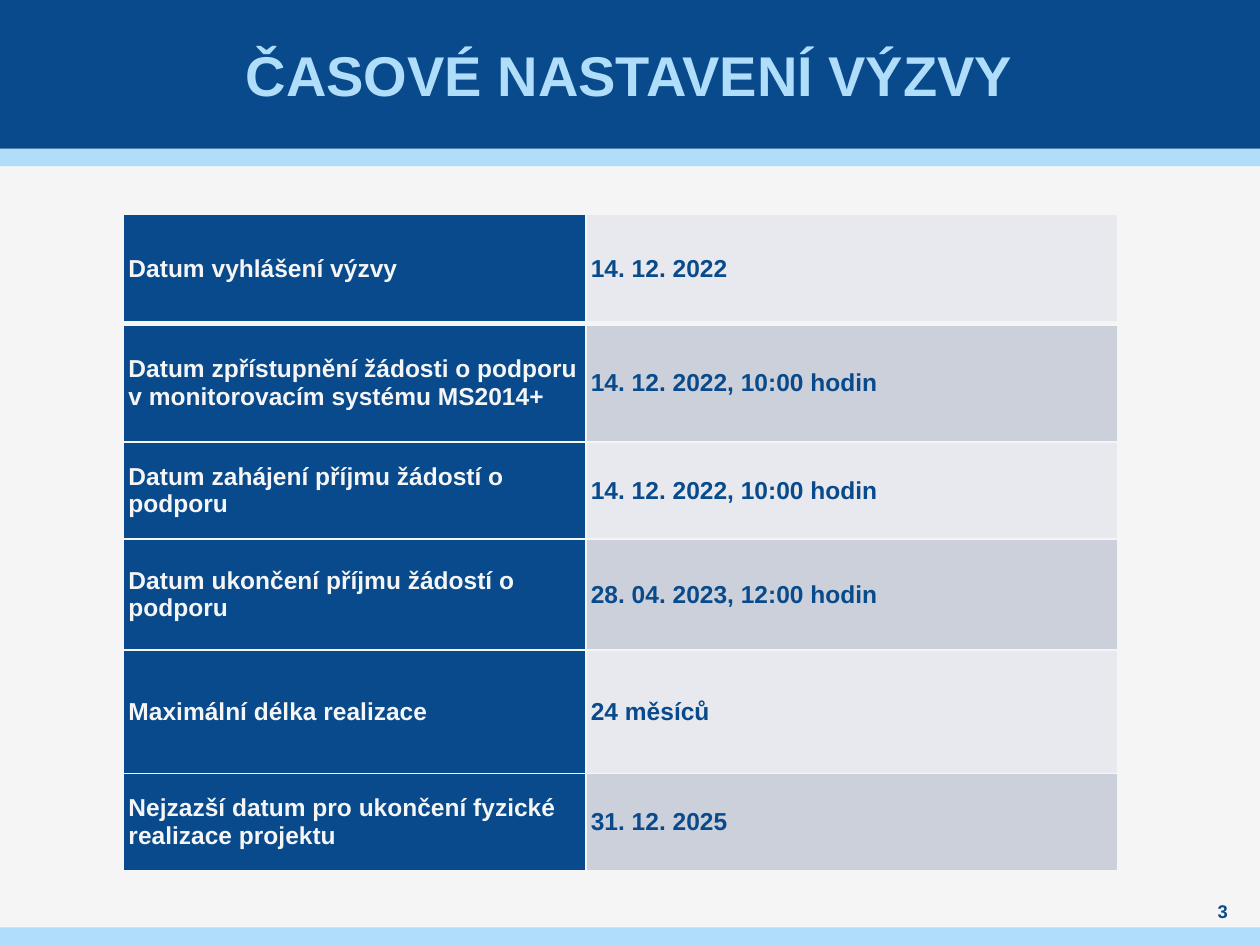
from lxml import etree
from pptx import Presentation
from pptx.dml.color import RGBColor
from pptx.enum.shapes import MSO_SHAPE
from pptx.enum.text import MSO_ANCHOR, PP_ALIGN
from pptx.oxml.ns import qn
from pptx.util import Inches, Pt

RECTANGLE = MSO_SHAPE.RECTANGLE
MIDDLE = MSO_ANCHOR.MIDDLE
LEFT, CENTER = PP_ALIGN.LEFT, PP_ALIGN.CENTER

NAVY, SKY, PAPER = "084A8B", "AFDDFA", "F5F5F5"
BANDS = ("E7E9EE", "CCD0DA")
COLUMN_WIDTHS = (3.67, 4.22)
SCHEDULE = (
    (0.87, "Datum vyhlášení výzvy", "14. 12. 2022"),
    (0.94, "Datum zpřístupnění žádosti o podporu v monitorovacím systému MS2014+",
     "14. 12. 2022, 10:00 hodin"),
    (0.77, "Datum zahájení příjmu žádostí o podporu", "14. 12. 2022, 10:00 hodin"),
    (0.88, "Datum ukončení příjmu žádostí o podporu", "28. 04. 2023, 12:00 hodin"),
    (0.98, "Maximální délka realizace", "24 měsíců"),
    (0.77, "Nejzazší datum pro ukončení fyzické realizace projektu", "31. 12. 2025"),
)


def paint(fill, color):
    """Make a fill solid in a hex colour."""
    fill.solid()
    fill.fore_color.rgb = RGBColor.from_string(color)


def write(frame, text, size, color, align):
    """Put one bold paragraph into a text frame."""
    paragraph = frame.paragraphs[0]
    paragraph.text = text
    paragraph.alignment = align
    font = paragraph.font
    font.name, font.size, font.bold = "Arial", Pt(size), True
    font.color.rgb = RGBColor.from_string(color)


def add_band(slide, top, height, color):
    """Draw a full-width bar."""
    band = slide.shapes.add_shape(
        RECTANGLE, 0, Inches(top), Inches(10), Inches(height))
    band.shadow.inherit = False
    paint(band.fill, color)
    band.line.fill.background()


def add_label(slide, box, text, size, color):
    """Add a centred text box without insets."""
    label = slide.shapes.add_textbox(*(Inches(length) for length in box))
    frame = label.text_frame
    frame.word_wrap = True
    frame.vertical_anchor = MIDDLE
    frame.margin_left = frame.margin_right = 0
    frame.margin_top = frame.margin_bottom = 0
    write(frame, text, size, color, CENTER)


def set_borders(cell, widths):
    """Give a cell its left, right, top and bottom lines in points."""
    properties = cell._tc.get_or_add_tcPr()
    for side, width in zip("LRTB", widths):
        line = etree.SubElement(properties, qn(f"a:ln{side}"), w=str(Pt(width)))
        solid = etree.SubElement(line, qn("a:solidFill"))
        etree.SubElement(solid, qn("a:srgbClr"), val=PAPER)


def fill_cell(cell, text, color, background, borders):
    """Style one table cell and write its text."""
    set_borders(cell, borders)
    paint(cell.fill, background)
    cell.vertical_anchor = MIDDLE
    cell.margin_left = Inches(0.04)
    cell.margin_right = cell.margin_top = cell.margin_bottom = 0
    write(cell.text_frame, text, 14, color, LEFT)


def add_schedule(slide):
    """Add the table of dates with a thick line below its first row."""
    height = sum(row[0] for row in SCHEDULE)
    table = slide.shapes.add_table(
        len(SCHEDULE), len(COLUMN_WIDTHS), Inches(0.98), Inches(1.7),
        Inches(sum(COLUMN_WIDTHS)), Inches(height)).table
    for column, width in zip(table.columns, COLUMN_WIDTHS):
        column.width = Inches(width)
    for index, (row_height, milestone, date) in enumerate(SCHEDULE):
        table.rows[index].height = Inches(row_height)
        borders = (1, 1, 3 if index == 1 else 1, 3 if index == 0 else 1)
        fill_cell(table.cell(index, 0), milestone, PAPER, NAVY, borders)
        fill_cell(table.cell(index, 1), date, NAVY, BANDS[index % 2], borders)


def main():
    """Build and save the slide."""
    deck = Presentation()
    deck.slide_width, deck.slide_height = Inches(10), Inches(7.5)
    slide = deck.slides.add_slide(deck.slide_layouts[6])
    paint(slide.background.fill, PAPER)
    add_band(slide, 1.18, 0.14, SKY)
    add_band(slide, 0, 1.18, NAVY)
    add_band(slide, 7.36, 0.14, SKY)
    add_label(slide, (0.39, 0, 9.21, 1.18), "ČASOVÉ NASTAVENÍ VÝZVY", 32, SKY)
    add_label(slide, (9.45, 7.13, 0.51, 0.2), "3", 10.5, NAVY)
    add_schedule(slide)
    deck.save("out.pptx")


if __name__ == "__main__":
    main()
